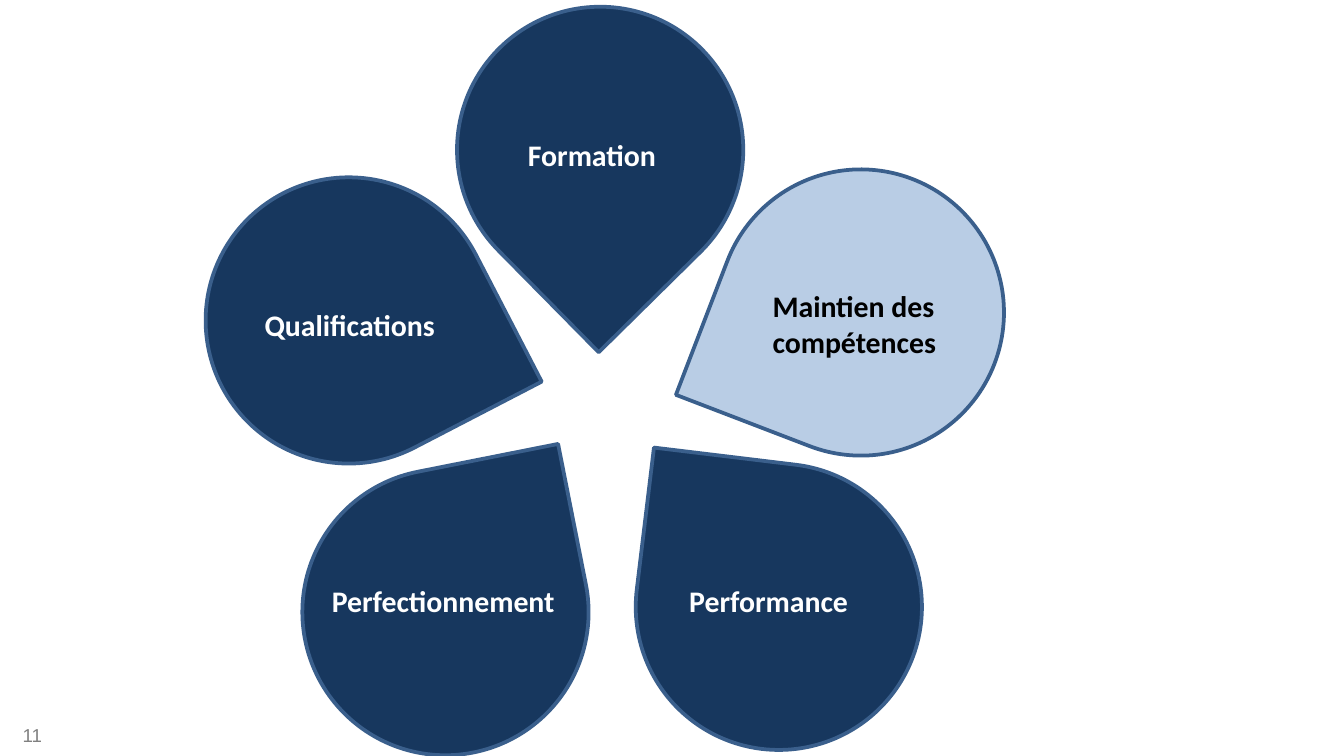
import pptx
import pptx.util
import pptx.dml.color
import pptx.enum.shapes
import pptx.enum.text

Inches = pptx.util.Inches
Pt = pptx.util.Pt
NAVY, PALE, EDGE = "17375E", "B9CDE5", "3A5F8C"
WHITE, BLACK, GREY = "FFFFFF", "000000", "808080"
WIDTH = 10
SIZE = 2.13


def color(code):
    return pptx.dml.color.RGBColor.from_string(code)


def label(box, text, font, size, ink, bold=False):
    """Add a text box with one paragraph per line of text."""
    shape = slide.shapes.add_textbox(*map(Inches, box))
    frame = shape.text_frame
    frame.word_wrap = False
    frame.text = text
    for para in frame.paragraphs:
        para.font.name = font
        para.font.size = Pt(size)
        para.font.bold = bold
        para.font.color.rgb = color(ink)
    return shape


deck = pptx.Presentation()
deck.slide_width = Inches(WIDTH)
deck.slide_height = Inches(WIDTH * 9 / 16)
slide = deck.slides.add_slide(deck.slide_layouts[6])

number = label((-0.07, 5.32, 0.48, 0.3), "11", "Arial", 10, GREY).text_frame
number.word_wrap = True
number.vertical_anchor = pptx.enum.text.MSO_ANCHOR.MIDDLE
number.paragraphs[0].alignment = pptx.enum.text.PP_ALIGN.RIGHT

# Petal left, top, turn and fill; label text, box, ink and whether it is filled
petals = [
    (1.53, 1.32, 62.6, NAVY, "Qualifications", (1.87, 2.23, 1.49, 0.37), WHITE, False),
    (2.25, 3.49, 348.8, NAVY, "Perfectionnement", (2.37, 4.29, 1.88, 0.37), WHITE, False),
    (3.4, 0.05, 135.4, NAVY, "Formation", (3.83, 0.97, 1.17, 0.37), WHITE, True),
    (5.34, 1.26, 201, PALE, "Maintien des\ncompétences", (5.65, 2.09, 1.43, 0.64), BLACK, False),
    (4.73, 3.45, 276.9, NAVY, "Performance", (5.03, 4.29, 1.4, 0.37), WHITE, True),
]
for left, top, turn, fill, text, box, ink, filled in petals:
    petal = slide.shapes.add_shape(
        pptx.enum.shapes.MSO_SHAPE.TEAR,
        Inches(left), Inches(top), Inches(SIZE), Inches(SIZE))
    petal.rotation = turn
    petal.shadow.inherit = False
    petal.fill.solid()
    petal.fill.fore_color.rgb = color(fill)
    petal.line.color.rgb = color(EDGE)
    petal.line.width = Pt(2)
    name = label(box, text, "Calibri", 16, ink, bold=True)
    name.text_frame.auto_size = pptx.enum.text.MSO_AUTO_SIZE.SHAPE_TO_FIT_TEXT
    if filled:
        name.fill.solid()
        name.fill.fore_color.rgb = color(fill)

deck.save("out.pptx")
